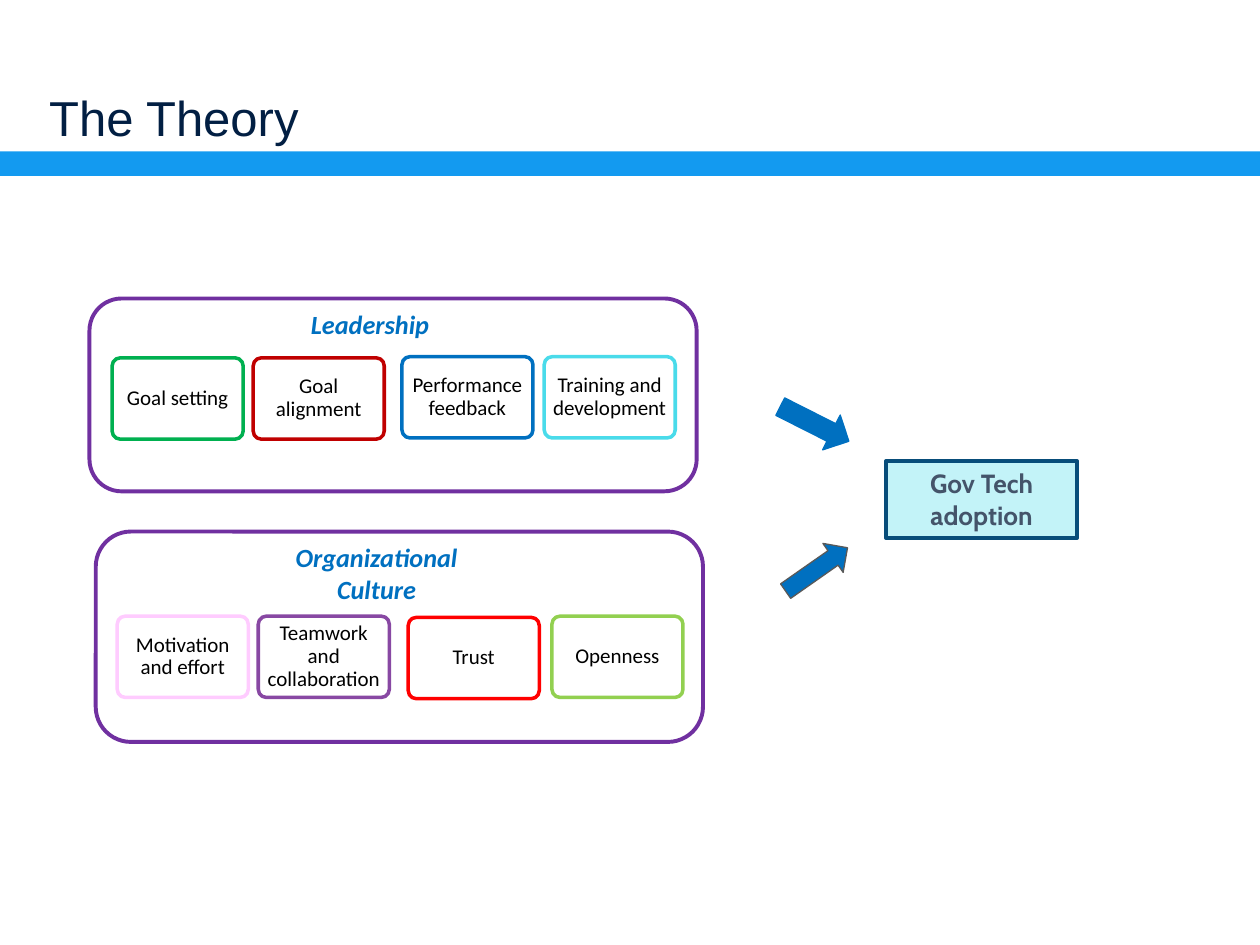
import pptx
import pptx.util
import pptx.dml.color
import pptx.enum.shapes
import pptx.enum.text
from dataclasses import dataclass

Pt = pptx.util.Pt
RGB = pptx.dml.color.RGBColor.from_string
SHAPE = pptx.enum.shapes.MSO_SHAPE
ALIGN = pptx.enum.text.PP_ALIGN
ANCHOR = pptx.enum.text.MSO_ANCHOR


@dataclass
class Theme:
    band: str = "139AF0"
    title: str = "021F43"
    panel: str = "7030A0"
    blue: str = "0070C0"
    grey: str = "595959"
    white: str = "FFFFFF"
    black: str = "000000"
    outcome_fill: str = "C3F3F8"
    outcome_line: str = "084D7A"
    outcome_text: str = "44546A"
    title_size: float = 28
    heading_size: float = 15
    card_size: float = 12


theme = Theme()


def add_box(shape, x, y, w, h, fill=None, line=None, width=2):
    sp = s.shapes.add_shape(shape, Pt(x), Pt(y), Pt(w), Pt(h))
    sp.shadow.inherit = False
    if fill:
        sp.fill.solid()
        sp.fill.fore_color.rgb = RGB(fill)
    else:
        sp.fill.background()
    if line:
        sp.line.color.rgb = RGB(line)
        sp.line.width = Pt(width)
    else:
        sp.line.fill.background()
    return sp


def set_text(sp, text, font, size, color, bold=False, italic=False,
             align=ALIGN.CENTER, anchor=ANCHOR.TOP, inset=None, spacing=None):
    tf = sp.text_frame
    tf.word_wrap = True
    tf.vertical_anchor = anchor
    if inset is not None:
        tf.margin_left = tf.margin_right = Pt(inset)
        tf.margin_top = tf.margin_bottom = Pt(inset)
    p = tf.paragraphs[0]
    p.text = text
    p.alignment = align
    p.line_spacing = spacing
    p.font.name = font
    p.font.size = Pt(size)
    p.font.color.rgb = RGB(color)
    p.font.bold = bold
    p.font.italic = italic


prs = pptx.Presentation()
prs.slide_width = Pt(720)
prs.slide_height = Pt(540)
s = prs.slides.add_slide(prs.slide_layouts[6])

add_box(SHAPE.RECTANGLE, 0, 86.6, 720, 13.9, fill=theme.band)
title = s.shapes.add_textbox(Pt(28.1), Pt(23.8), Pt(666), Pt(59.8))
set_text(title, "The Theory", "Arial", theme.title_size, theme.title,
         align=ALIGN.LEFT, anchor=ANCHOR.BOTTOM, inset=0)

panels = [
    ("Leadership", (51.1, 170.6, 347, 110.2), (168.5, 172.8, 86, 25.2), [
        ("Goal setting", 64.1, 204.5, "00B050"),
        ("Goal alignment", 144.7, 204.5, "C00000"),
        ("Performance feedback", 229.7, 203.8, theme.blue),
        ("Training and development", 311, 203.8, "4ADBEA"),
    ]),
    ("Organizational Culture", (54.7, 303.8, 347, 120.2), (140.2, 306, 150, 43.9), [
        ("Motivation and effort", 67, 352.1, "FFCCFF"),
        ("Teamwork and collaboration", 147.6, 352.1, "8848A3"),
        ("Trust", 233.3, 352.8, "FF0000"),
        ("Openness", 315.4, 352.1, "92D050"),
    ]),
]
for heading, frame, heading_at, cards in panels:
    add_box(SHAPE.ROUNDED_RECTANGLE, *frame, line=theme.panel, width=2.25)
    tb = s.shapes.add_textbox(*map(Pt, heading_at))
    set_text(tb, heading, "Calibri", theme.heading_size, theme.blue, bold=True, italic=True)
    for label, x, y, color in cards:
        card = add_box(SHAPE.ROUNDED_RECTANGLE, x, y, 74.9, 46.5, theme.white, color)
        card.adjustments[0] = 0.1
        set_text(card, label, "Calibri", theme.card_size, theme.black,
                 anchor=ANCHOR.MIDDLE, inset=2.5, spacing=0.9)

arrows = [
    (454.3, 220.3, 22.3, 43.9, 296.8, theme.blue),
    (456.5, 303.8, 20.2, 43.2, 235, theme.grey),
]
for x, y, w, h, angle, line in arrows:
    arrow = add_box(SHAPE.DOWN_ARROW, x, y, w, h, theme.blue, line, 0.75)
    arrow.rotation = angle

outcome = add_box(SHAPE.RECTANGLE, 506.2, 263.5, 109.4, 43.9,
                  theme.outcome_fill, theme.outcome_line)
set_text(outcome, "Gov Tech adoption", "Cabin", theme.heading_size,
         theme.outcome_text, bold=True)

prs.save("out.pptx")
